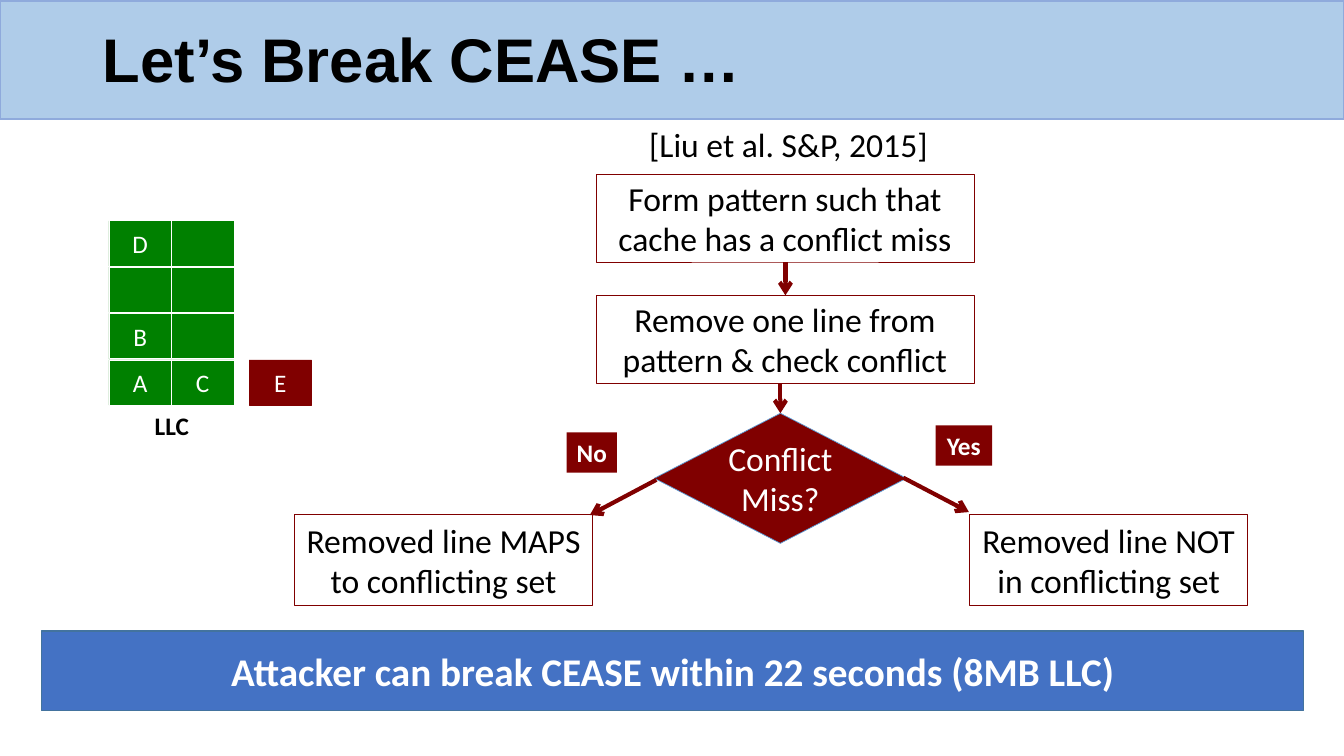
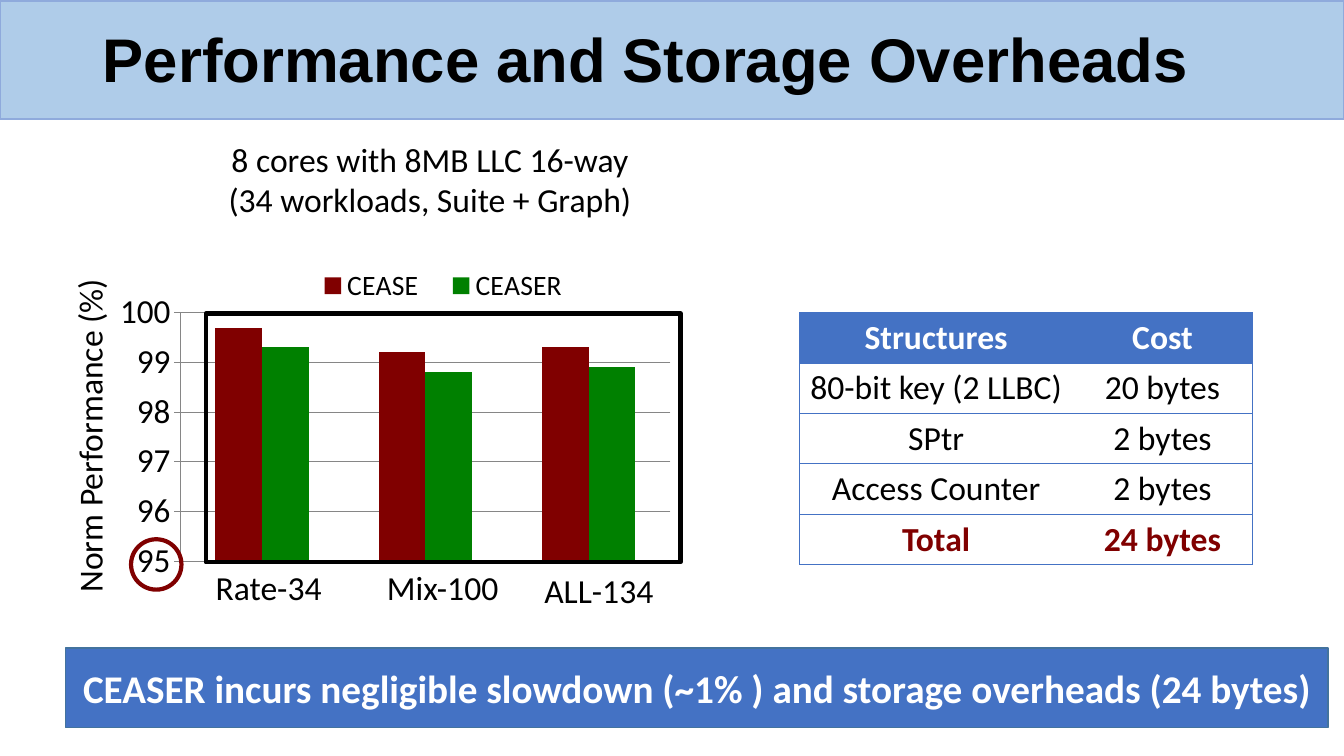
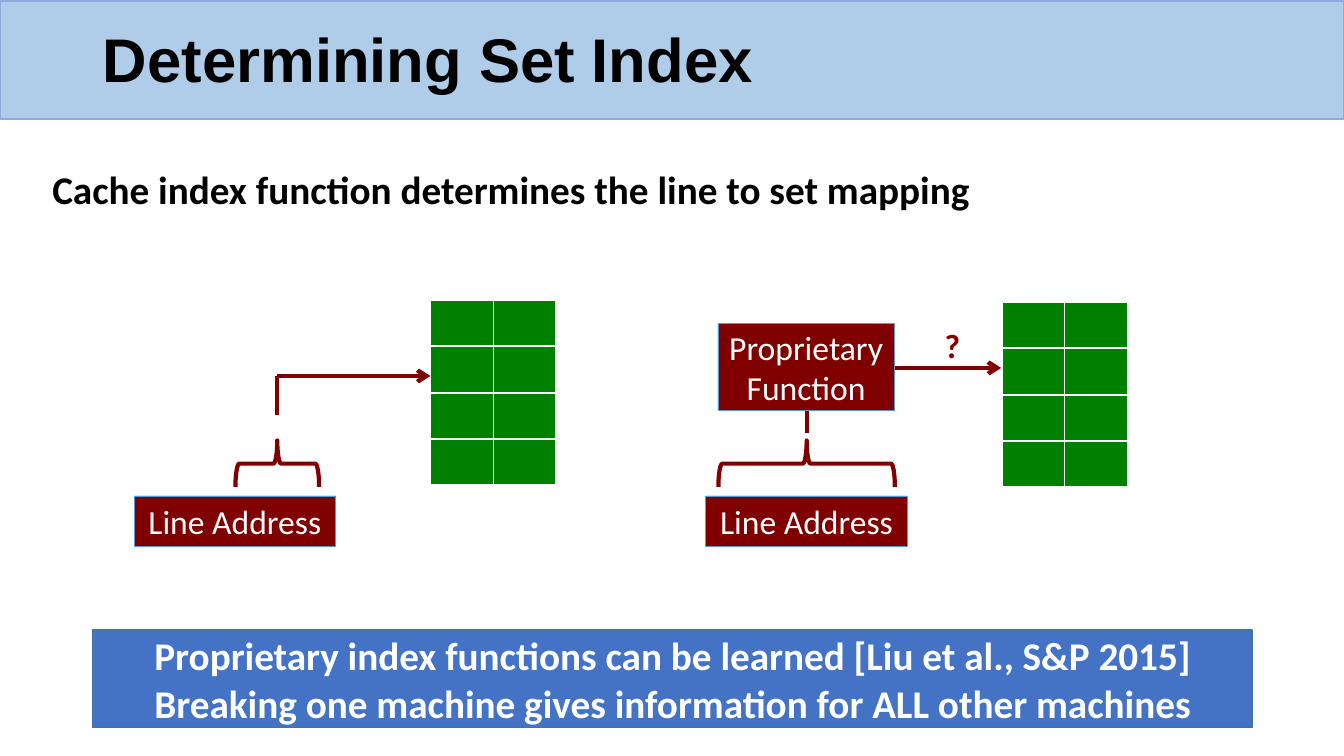
from lxml.etree import SubElement
from pptx import Presentation
from pptx.chart.data import CategoryChartData
from pptx.dml.color import RGBColor
from pptx.enum.chart import XL_CHART_TYPE, XL_LEGEND_POSITION, XL_TICK_MARK
from pptx.enum.shapes import MSO_CONNECTOR, MSO_SHAPE
from pptx.enum.text import MSO_ANCHOR, MSO_AUTO_SIZE, PP_ALIGN
from pptx.oxml import parse_xml
from pptx.oxml.ns import nsdecls, qn
from pptx.util import Inches, Pt

HUES = {
    "black": "000000", "white": "FFFFFF", "red": "800000", "green": "008000",
    "blue": "4472C4", "edge": "43739E", "sky": "5B9BD5", "band": "AFCCE9",
    "rim": "8FAADC", "gray": "868686",
}


def hue(name):
    return RGBColor.from_string(HUES[name])


def style(font, size, color="black", bold=False, face="Calibri"):
    font.name, font.size, font.bold = face, Pt(size), bold
    font.color.rgb = hue(color)


def write(frame, text, size=24, color="black", bold=False, face="Calibri",
          align=PP_ALIGN.CENTER, anchor=MSO_ANCHOR.MIDDLE, wrap=True, space=None):
    frame.word_wrap = wrap
    frame.vertical_anchor = anchor
    for i, line in enumerate(text.split("\n")):
        para = frame.add_paragraph() if i else frame.paragraphs[0]
        para.alignment = align
        para.line_spacing = space
        run = para.add_run()
        run.text = line
        style(run.font, size, color, bold, face)


def stroke(line, color, width):
    line.color.rgb = hue(color)
    line.width = Pt(width)


def place(node, index, *spots):
    old = node.find(qn("c:layout"))
    if old is not None:
        node.remove(old)
    layout = parse_xml(f"<c:layout {nsdecls('c')}><c:manualLayout/></c:layout>")
    parts = [("xMode", "edge"), ("yMode", "edge"), *zip("xywh", spots)]
    if index == 0:
        parts.insert(0, ("layoutTarget", "inner"))
    for tag, val in parts:
        SubElement(layout[0], qn("c:" + tag)).set("val", str(val))
    node.insert(index, layout)


class Deck:
    def __init__(self):
        self.show = Presentation()
        self.show.slide_width = Inches(13.33)
        self.show.slide_height = Inches(7.5)
        self.base = self.show.slide_layouts[5]
        self.slide = None

    def start(self, title):
        first = self.slide is None
        self.slide = self.show.slides.add_slide(self.base)
        if first:
            band = self.box(0, 0.01, 13.33, 1.17, fill="band", line="rim", width=1)
            self.base.shapes.element.insert(2, band.element)
        head = self.slide.shapes.title
        head.left, head.top = Inches(0.92), Inches(0.23)
        head.width, head.height = Inches(11.5), Inches(0.78)
        head.text_frame.auto_size = MSO_AUTO_SIZE.NONE
        write(head.text_frame, title, size=44, bold=True, face="Arial",
              align=PP_ALIGN.LEFT, space=0.9)

    def box(self, x, y, w, h, text="", kind=MSO_SHAPE.RECTANGLE, fill=None,
            line=None, width=0.5, turn=0, **form):
        shape = self.slide.shapes.add_shape(kind, Inches(x), Inches(y), Inches(w), Inches(h))
        shape.shadow.inherit = False
        shape.rotation = turn
        if fill:
            shape.fill.solid()
            shape.fill.fore_color.rgb = hue(fill)
        else:
            shape.fill.background()
        if line:
            stroke(shape.line, line, width)
        else:
            shape.line.fill.background()
        if text:
            write(shape.text_frame, text, **form)
        return shape

    def label(self, x, y, w, h, text, turn=0, align=PP_ALIGN.LEFT, **form):
        shape = self.slide.shapes.add_textbox(Inches(x), Inches(y), Inches(w), Inches(h))
        shape.rotation = turn
        write(shape.text_frame, text, align=align, anchor=MSO_ANCHOR.TOP, wrap=False, **form)

    def note(self, x, y, w, h, text):
        self.box(x, y, w, h, text, fill="blue", line="edge", width=1,
                 size=28, color="white", bold=True)

    def link(self, x1, y1, x2, y2, arrow=True):
        line = self.slide.shapes.add_connector(
            MSO_CONNECTOR.STRAIGHT, Inches(x1), Inches(y1), Inches(x2), Inches(y2))
        stroke(line.line, "red", 3)
        props = line.element.spPr
        if arrow:
            SubElement(props.find(qn("a:ln")), qn("a:tailEnd")).set("type", "arrow")
        SubElement(props, qn("a:effectLst"))

    def cache(self, x, y, names=("",) * 8):
        for i, name in enumerate(names):
            row, col = divmod(i, 2)
            self.box(x + 0.62 * col, y + 0.46 * row, 0.62, 0.45, name,
                     fill="green", line="white", size=18, color="white")

    def chart(self, x, y, w, h, cats, series):
        data = CategoryChartData()
        data.categories = cats
        for name, vals, _ in series:
            data.add_series(name, vals)
        chart = self.slide.shapes.add_chart(
            XL_CHART_TYPE.COLUMN_CLUSTERED, Inches(x), Inches(y), Inches(w), Inches(h), data).chart
        style(chart.font, 10)
        chart.has_title = False
        plot = chart.plots[0]
        plot.gap_width, plot.overlap, plot.vary_by_categories = 150, 0, False
        for bar, (_, _, color) in zip(plot.series, series):
            bar.format.fill.solid()
            bar.format.fill.fore_color.rgb = hue(color)
        chart.category_axis.visible = False
        axis = chart.value_axis
        axis.minimum_scale, axis.maximum_scale, axis.major_unit = 95, 100, 1
        axis.major_tick_mark = XL_TICK_MARK.OUTSIDE
        axis.tick_labels.number_format = "0"
        axis.tick_labels.number_format_is_linked = False
        style(axis.tick_labels.font, 24)
        stroke(axis.format.line, "gray", 0.75)
        stroke(axis.major_gridlines.format.line, "gray", 0.75)
        chart.has_legend = True
        chart.legend.position = XL_LEGEND_POSITION.TOP
        chart.legend.include_in_layout = False
        style(chart.legend.font, 20)
        root = chart.element
        place(root.find(".//" + qn("c:plotArea")), 0, 0.095, 0.182, 0.885, 0.756)
        place(root.find(".//" + qn("c:legend")), 1, 0.31, 0.04, 0.52, 0.12)

    def table(self, x, y, cols, high, rows):
        grid = self.slide.shapes.add_table(
            len(rows), len(cols), Inches(x), Inches(y),
            Inches(sum(cols)), Inches(high * len(rows))).table
        for col, wide in zip(grid.columns, cols):
            col.width = Inches(wide)
        for r, row in enumerate(rows):
            grid.rows[r].height = Inches(high)
            head, total = r == 0, r == len(rows) - 1
            for c, text in enumerate(row):
                cell = grid.cell(r, c)
                write(cell.text_frame, text, bold=head or total,
                      color="white" if head else "red" if total else "black")
                self.frame(cell, c == 0, c == len(cols) - 1)
                if head:
                    cell.fill.solid()
                    cell.fill.fore_color.rgb = hue("blue")
                else:
                    cell.fill.background()

    def frame(self, cell, left, right):
        props = cell._tc.get_or_add_tcPr()
        for side, shown in zip("LRTB", (left, right, True, True)):
            line = SubElement(props, qn("a:ln" + side))
            line.set("w", str(Pt(0.5)))
            if shown:
                fill = SubElement(line, qn("a:solidFill"))
                SubElement(fill, qn("a:srgbClr")).set("val", HUES["blue"])
            else:
                SubElement(line, qn("a:noFill"))


def attack(deck):
    deck.start("Let’s Break CEASE …")
    deck.cache(1.08, 2.19, ("D", "", "", "", "B", "", "A", "C"))
    deck.label(1.43, 4.02, 0.55, 0.4, "LLC", size=18, bold=True, align=PP_ALIGN.CENTER)
    deck.box(2.47, 3.57, 0.62, 0.45, "E", fill="red", line="red", size=18, color="white")
    deck.note(0.41, 6.26, 12.52, 0.79, "Attacker can break CEASE within 22 seconds (8MB LLC)")
    deck.label(6.34, 1.18, 3.04, 0.5, "[Liu et al. S&P, 2015]")
    deck.box(5.91, 1.73, 3.75, 0.87, "Form pattern such that cache has a conflict miss", line="red")
    deck.box(5.91, 2.93, 3.75, 0.87, "Remove one line from pattern & check conflict", line="red")
    for x, w, text in ((2.92, 2.96, "Removed line MAPS\nto conflicting set"),
                       (9.62, 2.75, "Removed line NOT\nin conflicting set")):
        deck.box(x, 5.1, w, 0.91, text, line="red", width=0.75, wrap=False)
    deck.box(6.49, 4.1, 2.5, 1.29, "Conflict Miss?", kind=MSO_SHAPE.DIAMOND,
             fill="red", line="sky", color="white")
    for x, y, w, text in ((5.62, 4.29, 0.5, "No"), (9.28, 4.22, 0.56, "Yes")):
        deck.box(x, y, w, 0.4, text, fill="red", size=18, color="white", bold=True, wrap=False)
    for ends in ((7.79, 2.6, 7.79, 2.93), (7.74, 3.8, 7.74, 4.1),
                 (6.51, 4.76, 5.85, 5.11), (8.96, 4.74, 9.61, 5.08)):
        deck.link(*ends)


def costs(deck):
    deck.start("Performance and Storage Overheads")
    deck.note(0.65, 6.43, 12.52, 0.79,
              "CEASER incurs negligible slowdown (~1% ) and storage overheads (24 bytes)")
    deck.chart(1.19, 2.51, 5.57, 3.26, ("1", "2", "3"),
               (("CEASE", (99.7, 99.2, 99.3), "red"),
                ("CEASER", (99.3, 98.8, 98.9), "green")))
    for x, y, w, text in ((2.04, 5.58, 1.27, "Rate-34"), (3.74, 5.58, 1.33, "Mix-100"),
                          (5.3, 5.6, 1.3, "ALL-134")):
        deck.label(x, y, w, 0.5, text)
    deck.label(-0.79, 4.05, 3.35, 0.5, "Norm Performance (%)", turn=270)
    deck.label(2.15, 1.33, 4.23, 0.91, "8 cores with 8MB LLC 16-way\n(34 workloads, Suite + Graph)",
               align=PP_ALIGN.CENTER)
    deck.table(7.93, 3.1, (2.71, 1.78), 0.5,
               (("Structures", "Cost"), ("80-bit key (2 LLBC)", "20 bytes"),
                ("SPtr", "2 bytes"), ("Access Counter", "2 bytes"), ("Total", "24 bytes")))
    deck.box(2.04, 3.11, 4.71, 2.47, line="black", width=3)
    deck.box(1.3, 5.35, 0.5, 0.5, kind=MSO_SHAPE.OVAL, line="red", width=3)


def index(deck):
    deck.start("Determining Set Index")
    deck.label(0.42, 1.59, 9.42, 0.57, "Cache index function determines the line to set mapping",
               size=28, bold=True)
    deck.note(0.92, 6.25, 11.5, 0.97,
              "Proprietary index functions can be learned [Liu et al., S&P 2015]\n"
              "Breaking one machine gives information for ALL other machines")
    for x, top, mid, span in ((1.33, 2.98, 2.75, 0.83), (7, 3, 8, 1.75)):
        deck.cache(x + 2.94, top)
        deck.box(x, 4.92, 2, 0.5, "Line Address", fill="red", line="sky", color="white")
        deck.box(mid - 0.23, 4.6 - span / 2, 0.46, span, kind=MSO_SHAPE.LEFT_BRACE,
                 line="red", width=3, turn=90)
    deck.link(2.75, 3.73, 4.27, 3.73)
    deck.link(2.75, 3.73, 2.75, 4.12, arrow=False)
    deck.box(7.12, 3.21, 1.75, 0.86, "Proprietary\nFunction", fill="red", line="sky", color="white")
    deck.link(8.88, 3.65, 9.93, 3.65)
    deck.link(8, 4.08, 8, 4.3, arrow=False)
    deck.label(9.27, 3.17, 0.36, 0.5, "?", color="red", bold=True)


def main():
    deck = Deck()
    for build in (attack, costs, index):
        build(deck)
    deck.show.save("out.pptx")


if __name__ == "__main__":
    main()
